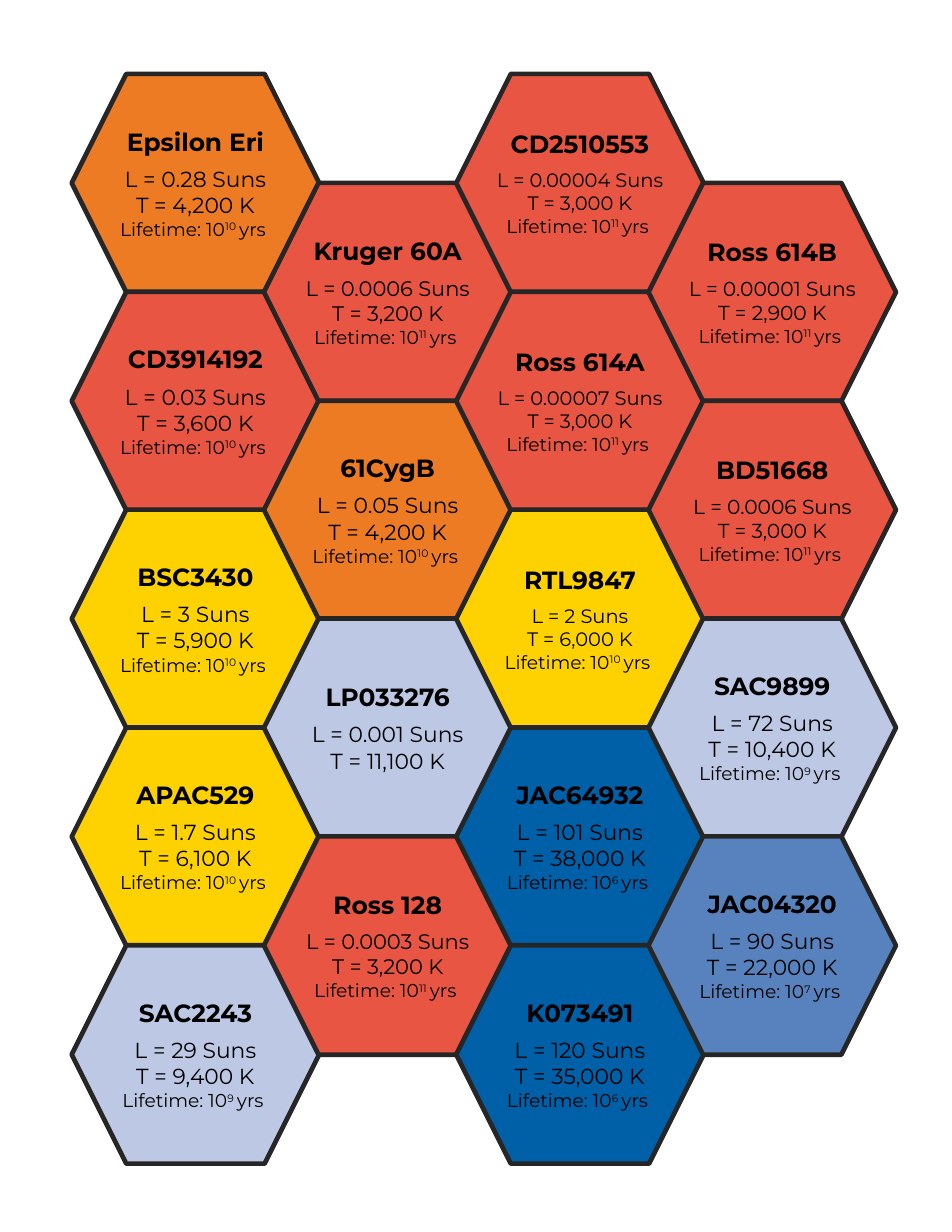
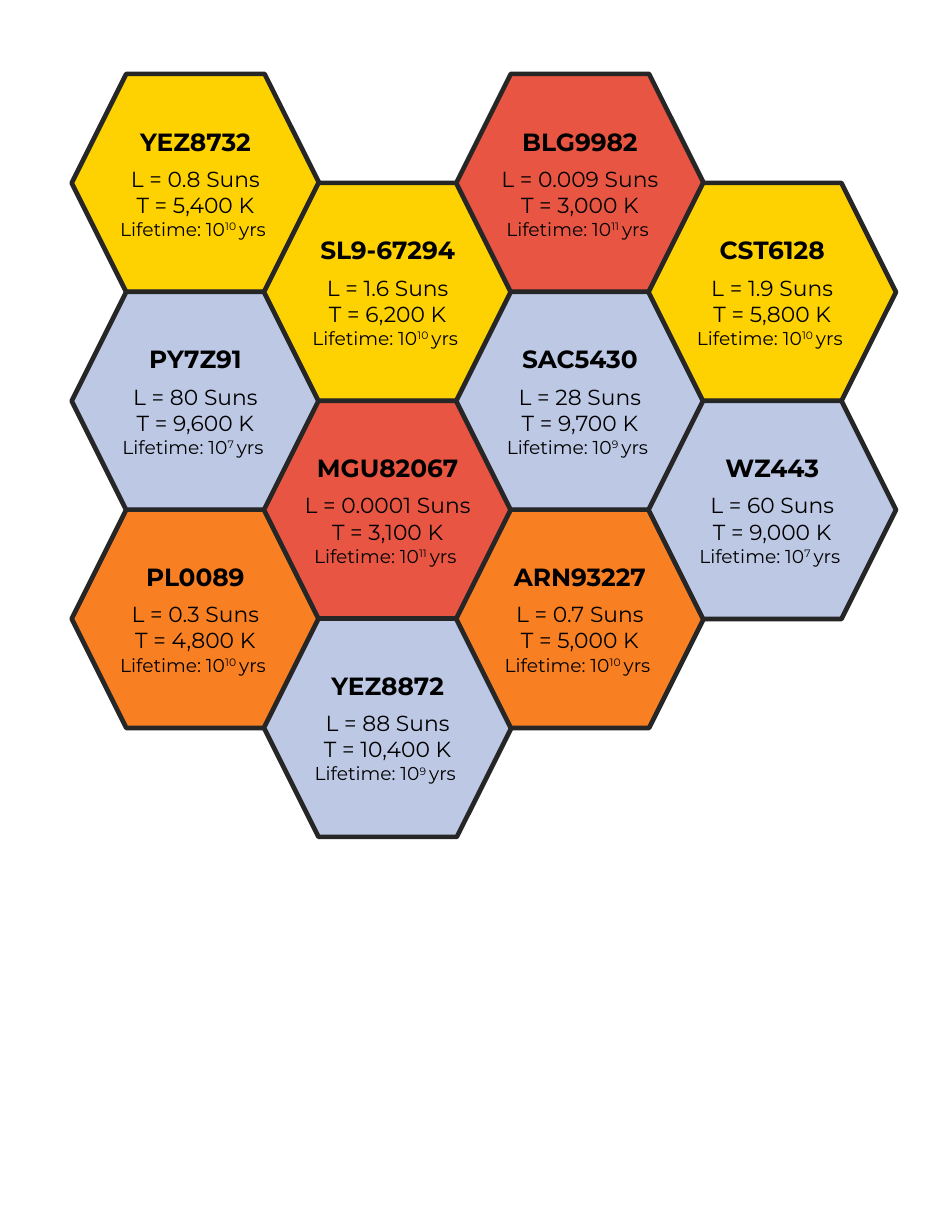
"""Build two sheets of hexagonal star cards in a honeycomb."""
from dataclasses import dataclass

from pptx import Presentation
from pptx.dml.color import RGBColor
from pptx.enum import shapes, text
from pptx.slide import Slide
from pptx.util import Inches, Pt


@dataclass(frozen=True)
class Theme:
    font: str = "Montserrat"
    ink: str = "000000"
    outline: str = "262626"
    red: str = "E85643"
    amber: str = "ED7B23"
    orange: str = "F88023"
    yellow: str = "FED100"
    pale_blue: str = "BDC8E4"
    mid_blue: str = "5782BD"
    deep_blue: str = "0060A7"
    outline_width: float = 3
    name_size: float = 16
    name_gap: float = 6
    data_size: float = 14
    lifetime_size: float = 12
    superscript: str = "30000"


@dataclass(frozen=True)
class Star:
    name: str
    luminosity: str
    temperature: str
    exponent: int | None
    color: str
    data_size: float


THEME = Theme()
CARD_WIDTH, CARD_HEIGHT = 2.21, 1.95
GRID_LEFT, GRID_TOP = 0.64, 0.66
COLUMN_PITCH = (5.79 - GRID_LEFT) / 3
ROW_PITCH = (8.44 - GRID_TOP) / 4


def star(name: str, luminosity: str, temperature: str, exponent: int | None,
         color: str, data_size: float = THEME.data_size) -> Star:
    """Describe a star, with the usual data size unless another is given."""
    return Star(name, luminosity, temperature, exponent, color, data_size)


SHEETS = [
    [
        [
            star("Epsilon Eri", "0.28", "4,200", 10, THEME.amber),
            star("CD3914192", "0.03", "3,600", 10, THEME.red),
            star("BSC3430", "3", "5,900", 10, THEME.yellow),
            star("APAC529", "1.7", "6,100", 10, THEME.yellow),
            star("SAC2243", "29", "9,400", 9, THEME.pale_blue),
        ],
        [
            star("Kruger 60A", "0.0006", "3,200", 11, THEME.red, 13.5),
            star("61CygB", "0.05", "4,200", 10, THEME.amber),
            star("LP033276", "0.001", "11,100", None, THEME.pale_blue),
            star("Ross 128", "0.0003", "3,200", 11, THEME.red, 13.5),
        ],
        [
            star("CD2510553", "0.00004", "3,000", 11, THEME.red, 12.5),
            star("Ross 614A", "0.00007", "3,000", 11, THEME.red, 12.5),
            star("RTL9847", "2", "6,000", 10, THEME.yellow, 12.5),
            star("JAC64932", "101", "38,000", 6, THEME.deep_blue),
            star("K073491", "120", "35,000", 6, THEME.deep_blue),
        ],
        [
            star("Ross 614B", "0.00001", "2,900", 11, THEME.red, 13),
            star("BD51668", "0.0006", "3,000", 11, THEME.red, 13),
            star("SAC9899", "72", "10,400", 9, THEME.pale_blue),
            star("JAC04320", "90", "22,000", 7, THEME.mid_blue),
        ],
    ],
    [
        [
            star("YEZ8732", "0.8", "5,400", 10, THEME.yellow),
            star("PY7Z91", "80", "9,600", 7, THEME.pale_blue),
            star("PL0089", "0.3", "4,800", 10, THEME.orange),
        ],
        [
            star("SL9-67294", "1.6", "6,200", 10, THEME.yellow),
            star("MGU82067", "0.0001", "3,100", 11, THEME.red),
            star("YEZ8872", "88", "10,400", 9, THEME.pale_blue),
        ],
        [
            star("BLG9982", "0.009", "3,000", 11, THEME.red),
            star("SAC5430", "28", "9,700", 9, THEME.pale_blue),
            star("ARN93227", "0.7", "5,000", 10, THEME.orange),
        ],
        [
            star("CST6128", "1.9", "5,800", 10, THEME.yellow),
            star("WZ443", "60", "9,000", 7, THEME.pale_blue),
        ],
    ],
]


def write_card(frame, star: Star) -> None:
    """Write the star's name and data, then format every line."""
    frame.word_wrap = True
    frame.vertical_anchor = text.MSO_ANCHOR.MIDDLE
    frame.margin_left = frame.margin_right = 0
    frame.margin_top = frame.margin_bottom = 0
    lines = [star.name, f"L = {star.luminosity} Suns", f"T = {star.temperature} K"]
    sizes = [THEME.name_size, star.data_size, star.data_size]
    if star.exponent is not None:
        lines.append("Lifetime: 10")
        sizes.append(THEME.lifetime_size)
    frame.text = "\n".join(lines)
    frame.paragraphs[0].space_after = Pt(THEME.name_gap)
    if star.exponent is not None:
        lifetime = frame.paragraphs[-1]
        power, unit = lifetime.add_run(), lifetime.add_run()
        power.text, unit.text = f"{star.exponent} ", "yrs "
        power.font._element.set("baseline", THEME.superscript)
    for index, (line, size) in enumerate(zip(frame.paragraphs, sizes)):
        line.alignment = text.PP_ALIGN.CENTER
        for run in line.runs:
            run.font.name = THEME.font
            run.font.size = Pt(size)
            run.font.bold = index == 0
            run.font.color.rgb = RGBColor.from_string(THEME.ink)


def draw_card(slide: Slide, star: Star, column: int, row: int) -> None:
    """Draw one hexagon, with odd columns half a row lower."""
    left = GRID_LEFT + column * COLUMN_PITCH
    top = GRID_TOP + (row + column % 2 / 2) * ROW_PITCH
    card = slide.shapes.add_shape(
        shapes.MSO_SHAPE.HEXAGON, Inches(left), Inches(top),
        Inches(CARD_WIDTH), Inches(CARD_HEIGHT))
    card.shadow.inherit = False
    card.fill.solid()
    card.fill.fore_color.rgb = RGBColor.from_string(star.color)
    card.line.color.rgb = RGBColor.from_string(THEME.outline)
    card.line.width = Pt(THEME.outline_width)
    write_card(card.text_frame, star)


def main() -> None:
    """Build and save both sheets."""
    deck = Presentation()
    deck.slide_width, deck.slide_height = Inches(8.5), Inches(11)
    for columns in SHEETS:
        slide = deck.slides.add_slide(deck.slide_layouts[6])
        for column, stars in enumerate(columns):
            for row, entry in enumerate(stars):
                draw_card(slide, entry, column, row)
    deck.save("out.pptx")


if __name__ == "__main__":
    main()
